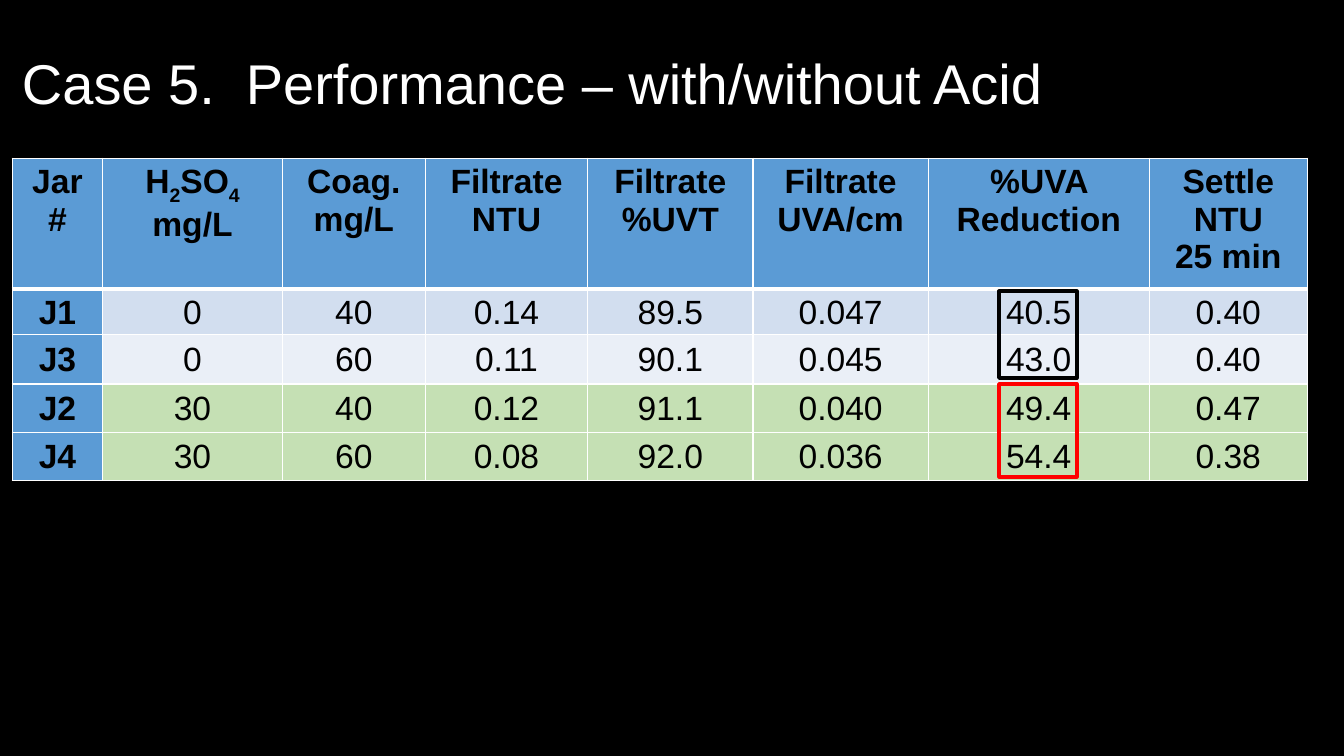
from dataclasses import dataclass

from lxml.etree import SubElement
from pptx import Presentation
from pptx.dml.color import RGBColor
from pptx.enum.shapes import MSO_SHAPE as Shape
from pptx.enum.text import MSO_ANCHOR as Anchor, PP_ALIGN as Align
from pptx.oxml.ns import qn
from pptx.slide import Slide
from pptx.table import _Cell as Cell
from pptx.text.text import Font
from pptx.util import Inches, Length, Pt


@dataclass(frozen=True)
class Theme:
    font: str = "Arial"
    title_size: int = 40
    table_size: int = 24
    background: str = "000000"
    title: str = "FFFFFF"
    ink: str = "000000"
    border: str = "FFFFFF"
    header: str = "5B9BD5"
    band_dark: str = "D2DEEF"
    band_light: str = "EAEFF7"
    acid: str = "C5E0B4"
    without_acid_frame: str = "000000"
    with_acid_frame: str = "FF0000"
    border_width: float = 1
    header_rule: float = 3
    frame_width: float = 2.75


@dataclass(frozen=True)
class Area:
    left: float
    top: float
    width: float
    height: float


@dataclass(frozen=True)
class Column:
    heading: str
    width: float


@dataclass(frozen=True)
class JarRow:
    values: str
    height: float
    fill: str


@dataclass(frozen=True)
class Frame:
    area: Area
    color: str


THEME = Theme()
SLIDE_WIDTH, SLIDE_HEIGHT = Inches(13.33), Inches(7.5)
TITLE = "Case 5.  Performance – with/without Acid"
TITLE_AREA = Area(0.9, 1.73, 97.75, 19.33)
TABLE_LEFT, TABLE_TOP, HEADER_HEIGHT = 0.9, 20.93, 16.2
FORMULA = ("H", "2", "SO", "4")
COLUMNS = (
    Column("Jar\n#", 6.75),
    Column("\nmg/L", 13.35),
    Column("Coag.\nmg/L", 10.65),
    Column("Filtrate\nNTU", 12.08),
    Column("Filtrate\n%UVT", 12.3),
    Column("Filtrate\nUVA/cm", 13.05),
    Column("%UVA Reduction", 16.43),
    Column("Settle\nNTU\n25 min", 11.78),
)
JARS = (
    JarRow("J1 0 40 0.14 89.5 0.047 40.5 0.40", 6, THEME.band_dark),
    JarRow("J3 0 60 0.11 90.1 0.045 43.0 0.40", 6.53, THEME.band_light),
    JarRow("J2 30 40 0.12 91.1 0.040 49.4 0.47", 6.4, THEME.acid),
    JarRow("J4 30 60 0.08 92.0 0.036 54.4 0.38", 6.4, THEME.acid),
)
FRAMES = (
    Frame(Area(74.34, 38.53, 5.78, 11.47), THEME.without_acid_frame),
    Frame(Area(74.34, 50.8, 5.78, 12.27), THEME.with_acid_frame),
)


def across(percent: float) -> Length:
    return Length(round(SLIDE_WIDTH * percent / 100))


def down(percent: float) -> Length:
    return Length(round(SLIDE_HEIGHT * percent / 100))


def place(area: Area) -> tuple[Length, Length, Length, Length]:
    return across(area.left), down(area.top), across(area.width), down(area.height)


def style(font: Font, size: int, color: str, bold: bool = False) -> None:
    font.name, font.size, font.bold = THEME.font, Pt(size), bold
    font.color.rgb = RGBColor.from_string(color)


def add_title(slide: Slide) -> None:
    text = slide.shapes.add_textbox(*place(TITLE_AREA)).text_frame
    text.word_wrap = True
    text.vertical_anchor = Anchor.MIDDLE
    text.text = TITLE
    para = text.paragraphs[0]
    para.line_spacing = 0.9
    style(para.runs[0].font, THEME.title_size, THEME.title)


def draw_borders(cell: Cell, top: float, bottom: float) -> None:
    properties = cell._tc.get_or_add_tcPr()
    side = THEME.border_width
    for tag, width in (("lnL", side), ("lnR", side), ("lnT", top), ("lnB", bottom)):
        line = SubElement(properties, qn(f"a:{tag}"), w=str(Pt(width)))
        fill = SubElement(line, qn("a:solidFill"))
        SubElement(fill, qn("a:srgbClr"), val=THEME.border)


def format_cell(cell: Cell, fill: str, bold: bool, top: float, bottom: float) -> None:
    draw_borders(cell, top, bottom)
    cell.fill.solid()
    cell.fill.fore_color.rgb = RGBColor.from_string(fill)
    for para in cell.text_frame.paragraphs:
        para.alignment = Align.CENTER
        for span in para.runs:
            style(span.font, THEME.table_size, THEME.ink, bold)


def add_formula(cell: Cell) -> None:
    para = cell.text_frame.paragraphs[0]
    for part in FORMULA:
        span = para.add_run()
        span.text = part
        if part.isdigit():
            span._r.get_or_add_rPr().set("baseline", "-25000")


def add_results(slide: Slide) -> None:
    heights = [HEADER_HEIGHT, *(jar.height for jar in JARS)]
    area = Area(TABLE_LEFT, TABLE_TOP, sum(c.width for c in COLUMNS), sum(heights))
    table = slide.shapes.add_table(len(heights), len(COLUMNS), *place(area)).table
    table.first_col = True
    for row, height in zip(table.rows, heights):
        row.height = down(height)
    thin, thick = THEME.border_width, THEME.header_rule
    for index, column in enumerate(COLUMNS):
        table.columns[index].width = across(column.width)
        cell = table.cell(0, index)
        cell.text_frame.text = column.heading
        if column.heading.startswith("\n"):
            add_formula(cell)
        format_cell(cell, THEME.header, True, thin, thick)
    for number, jar in enumerate(JARS, start=1):
        for index, value in enumerate(jar.values.split()):
            cell = table.cell(number, index)
            cell.text_frame.text = value
            cell.vertical_anchor = Anchor.MIDDLE
            cell.margin_left = cell.margin_right = cell.margin_top = Inches(0.01)
            cell.margin_bottom = 0
            is_label = index == 0
            fill = THEME.header if is_label else jar.fill
            format_cell(cell, fill, is_label, thick if number == 1 else thin, thin)


def add_frame(slide: Slide, frame: Frame) -> None:
    box = slide.shapes.add_shape(Shape.RECTANGLE, *place(frame.area))
    box.shadow.inherit = False
    box.fill.background()
    box.line.color.rgb = RGBColor.from_string(frame.color)
    box.line.width = Pt(THEME.frame_width)


def main() -> None:
    deck = Presentation()
    deck.slide_width, deck.slide_height = SLIDE_WIDTH, SLIDE_HEIGHT
    slide = deck.slides.add_slide(deck.slide_layouts[6])
    slide.background.fill.solid()
    slide.background.fill.fore_color.rgb = RGBColor.from_string(THEME.background)
    add_title(slide)
    add_results(slide)
    for frame in FRAMES:
        add_frame(slide, frame)
    deck.save("out.pptx")


if __name__ == "__main__":
    main()
